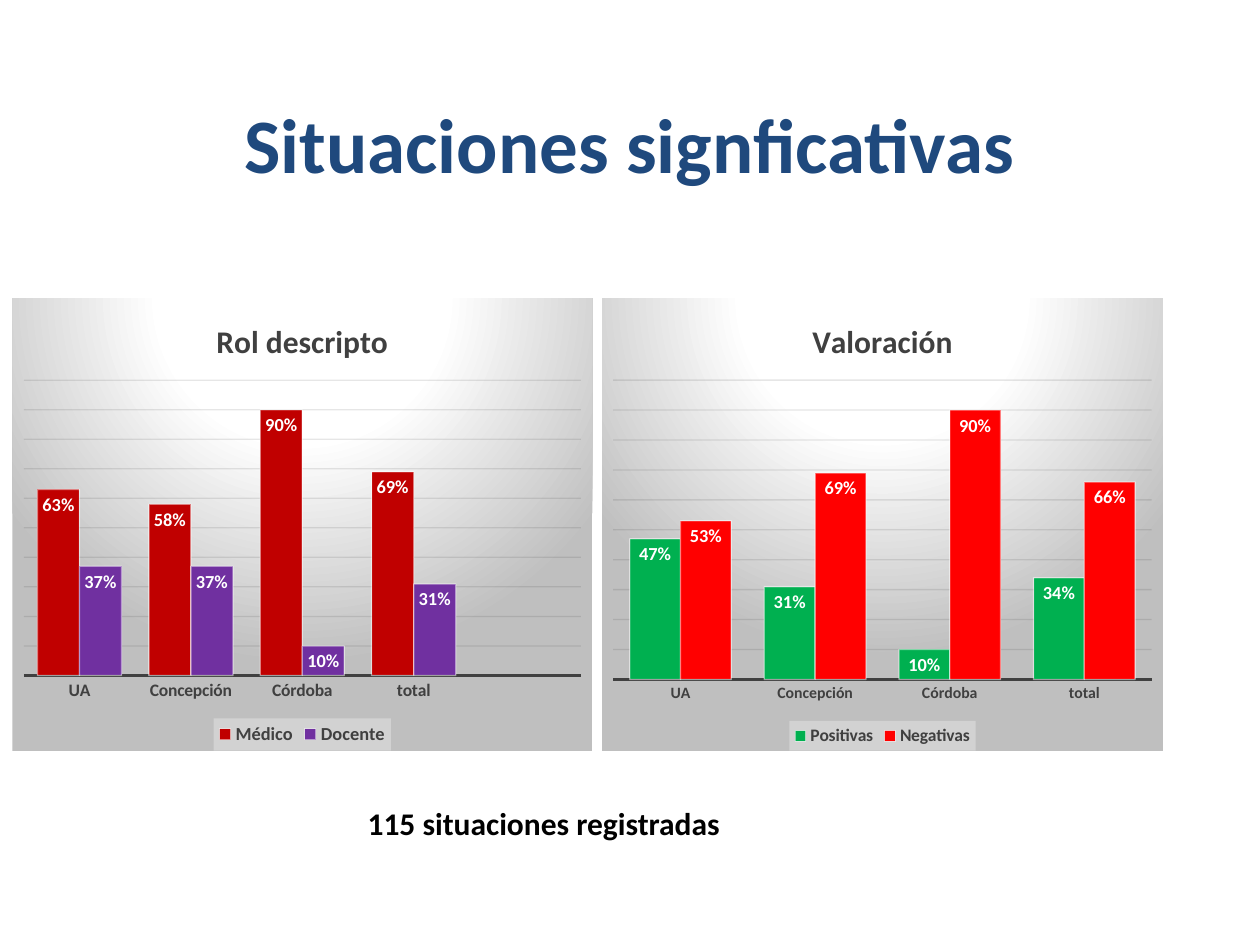
from lxml import etree
from pptx import Presentation
from pptx.chart.data import CategoryChartData
from pptx.dml.color import RGBColor
from pptx.enum.chart import XL_CHART_TYPE, XL_LABEL_POSITION, XL_LEGEND_POSITION, XL_TICK_MARK
from pptx.enum.text import MSO_ANCHOR, PP_ALIGN
from pptx.oxml import parse_xml
from pptx.oxml.ns import nsdecls, qn
from pptx.util import Pt

FONT = "Calibri"
NAVY = RGBColor(0x1F, 0x49, 0x7D)
BLACK = RGBColor(0, 0, 0)
WHITE = RGBColor(0xFF, 0xFF, 0xFF)
DARK = RGBColor(0x40, 0x40, 0x40)
GRID = RGBColor(0x0D, 0x0D, 0x0D)
PALE = RGBColor(0xF2, 0xF2, 0xF2)
SILVER = RGBColor(0xBF, 0xBF, 0xBF)
MAROON = RGBColor(0xC0, 0, 0)
PURPLE = RGBColor(0x70, 0x30, 0xA0)
GREEN = RGBColor(0, 0xB0, 0x50)
RED = RGBColor(0xFF, 0, 0)

# Content: title, left, width, axis and legend text sizes, categories, series
TITLE = "Situaciones signficativas"
FOOTNOTE = "115 situaciones registradas"
PLACES = ["UA", "Concepción", "Córdoba", "total"]
CHARTS = [
    ("Valoración", 344, 320.5, 9, 10, PLACES, [
        ("Positivas", GREEN, [0.47, 0.31, 0.10, 0.34]),
        ("Negativas", RED, [0.53, 0.69, 0.90, 0.66])]),
    ("Rol descripto", 7, 331.5, 10, 10.5, PLACES + [""], [
        ("Médico", MAROON, [0.63, 0.58, 0.90, 0.69, None]),
        ("Docente", PURPLE, [0.37, 0.37, 0.10, 0.31, None])]),
]
CHART_TOP, CHART_HEIGHT = 170.5, 258.5
GRADIENT = [(0, WHITE), (39, WHITE), (100, SILVER)]


def style(font, size, color):
    font.name, font.size, font.bold = FONT, Pt(size), True
    font.color.rgb = color


def add_text(s, box, text, size, color, align, anchor, wrap):
    tf = s.shapes.add_textbox(*map(Pt, box)).text_frame
    tf.word_wrap, tf.vertical_anchor = wrap, anchor
    p = tf.paragraphs[0]
    p.alignment = align
    r = p.add_run()
    r.text = text
    style(r.font, size, color)


def set_line(line, color, width, alpha=100):
    line.color.rgb = color
    line.width = Pt(width)
    if alpha < 100:
        clr = line.fill._xPr.find(".//" + qn("a:srgbClr"))
        etree.SubElement(clr, qn("a:alpha")).set("val", str(alpha * 1000))


def fill_background(chart):
    stops = "".join(f'<a:gs pos="{pos * 1000}"><a:srgbClr val="{color}"/></a:gs>'
                    for pos, color in GRADIENT)
    chart._chartSpace.find(qn("c:chart")).addnext(parse_xml(
        f'<c:spPr {nsdecls("c", "a")}><a:gradFill><a:gsLst>{stops}</a:gsLst>'
        '<a:path path="circle"><a:fillToRect l="50000" t="-80000" r="50000" b="180000"/>'
        '</a:path></a:gradFill><a:ln><a:noFill/></a:ln></c:spPr>'))


def add_legend(chart, size):
    chart.has_legend = True
    legend = chart.legend
    legend.position = XL_LEGEND_POSITION.BOTTOM
    legend.include_in_layout = False
    style(legend.font, size, DARK)
    # Translucent panel behind the legend
    legend._element.find(qn("c:txPr")).addprevious(parse_xml(
        f'<c:spPr {nsdecls("c", "a")}><a:solidFill><a:srgbClr val="{PALE}">'
        '<a:alpha val="39000"/></a:srgbClr></a:solidFill></c:spPr>'))


def add_bars(s, title, left, width, axis_size, legend_size, places, series):
    data = CategoryChartData(number_format="0%")
    data.categories = places
    for name, _, values in series:
        data.add_series(name, values)
    chart = s.shapes.add_chart(
        XL_CHART_TYPE.COLUMN_CLUSTERED, Pt(left), Pt(CHART_TOP),
        Pt(width), Pt(CHART_HEIGHT), data).chart
    chart.font.name, chart.font.size = FONT, Pt(10)
    fill_background(chart)

    chart.has_title = True
    r = chart.chart_title.text_frame.paragraphs[0].add_run()
    r.text = title
    style(r.font, 18, DARK)
    add_legend(chart, legend_size)

    # Axes
    cat, val = chart.category_axis, chart.value_axis
    cat.major_tick_mark = XL_TICK_MARK.NONE
    style(cat.tick_labels.font, axis_size, DARK)
    set_line(cat.format.line, DARK, 1.5)
    val.minimum_scale, val.maximum_scale, val.major_unit = 0, 1, 0.1
    val.has_major_gridlines = True
    set_line(val.major_gridlines.format.line, GRID, 0.75, 10)
    val.visible = False

    # Columns and their labels
    plot = chart.plots[0]
    plot.gap_width, plot.overlap, plot.vary_by_categories = 65, 0, False
    for ser, (_, color, _) in zip(plot.series, series):
        ser.format.fill.solid()
        ser.format.fill.fore_color.rgb = color
        set_line(ser.format.line, WHITE, 0.75, 50)
        labels = ser.data_labels
        labels.show_value = True
        labels.position = XL_LABEL_POSITION.INSIDE_END
        labels.number_format, labels.number_format_is_linked = "0%", False
        style(labels.font, 10.5, WHITE)


prs = Presentation()
prs.slide_width, prs.slide_height = Pt(720), Pt(540)
s = prs.slides.add_slide(prs.slide_layouts[6])
add_text(s, (36, 21.6, 648, 90), TITLE, 44, NAVY,
         PP_ALIGN.CENTER, MSO_ANCHOR.BOTTOM, True)
for spec_row in CHARTS:
    add_bars(s, *spec_row)
add_text(s, (203, 455.8, 252, 29), FOOTNOTE, 18, BLACK,
         PP_ALIGN.LEFT, MSO_ANCHOR.TOP, False)
prs.save("out.pptx")
